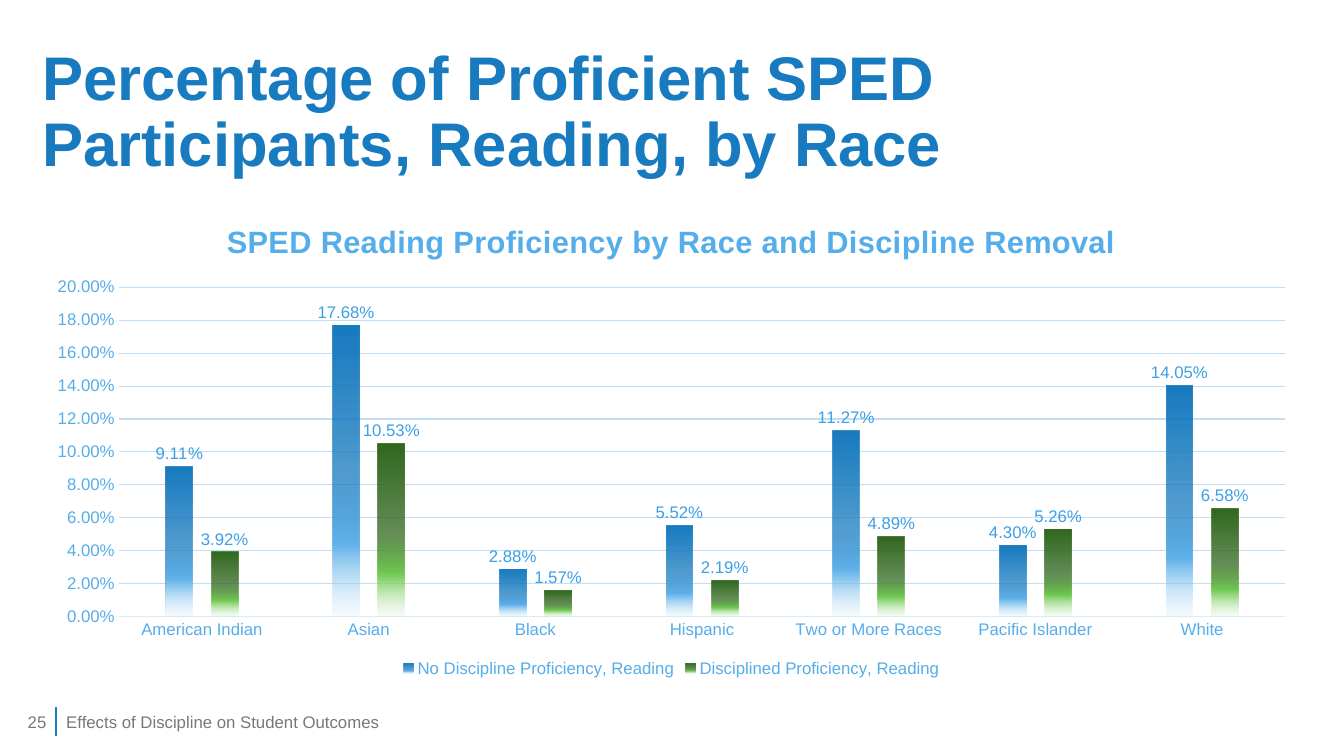
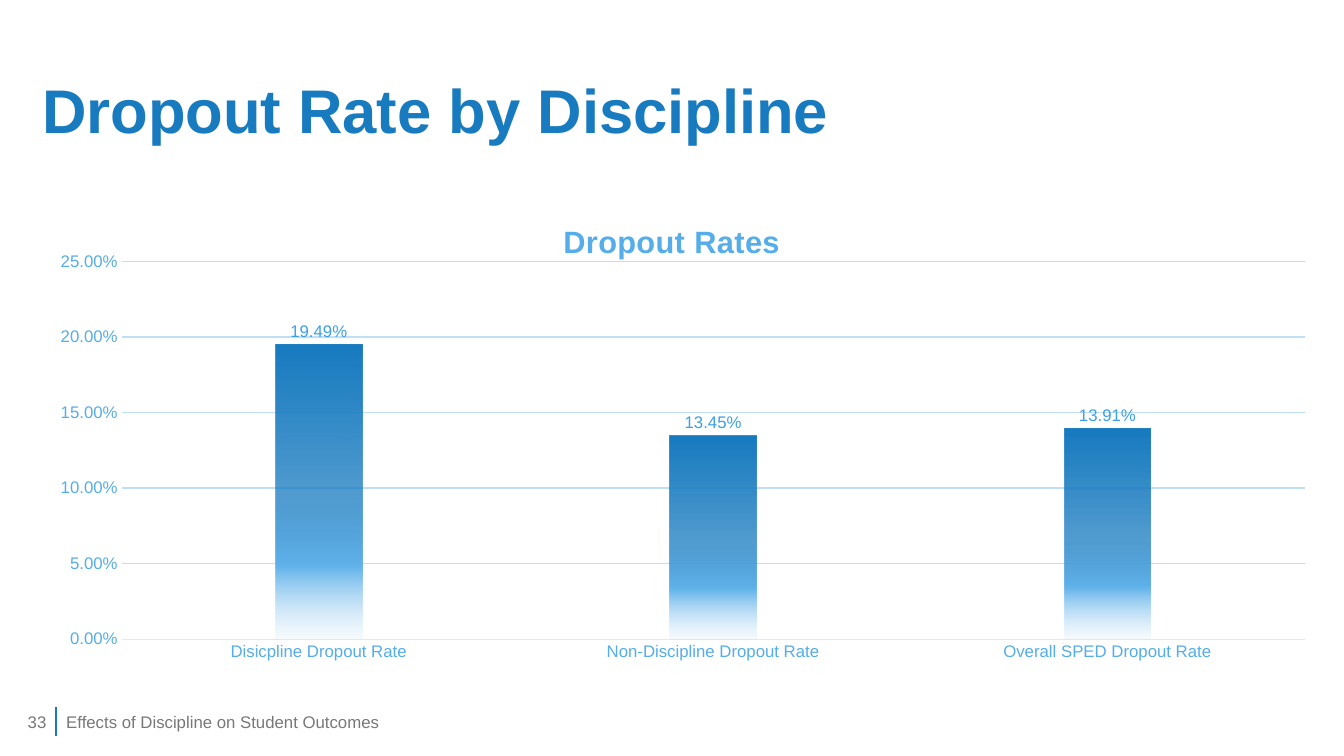
from lxml import etree
from pptx import Presentation
from pptx import util as u
from pptx.chart.data import CategoryChartData
from pptx.dml.color import RGBColor
from pptx.enum import chart as charts, shapes, text
from pptx.oxml import parse_xml
from pptx.oxml.ns import nsdecls, qn

FONT = "Arial"
BLUE = RGBColor(0x18, 0x7B, 0xC0)
LIGHT_BLUE = RGBColor(0x55, 0xAD, 0xEA)
LABEL_BLUE = RGBColor(0x3B, 0xA0, 0xE6)
AXIS_LINE = RGBColor(0xD8, 0xEC, 0xFA)
GRID_LINE = RGBColor(0xC0, 0xDF, 0xF5)
GRAY = RGBColor(0x78, 0x78, 0x78)

SKY = RGBColor(0x62, 0xB3, 0xEB)
PALE_BLUE = RGBColor(0xCB, 0xE6, 0xF8)
GREEN = RGBColor(0x32, 0x68, 0x20)
LEAF = RGBColor(0x71, 0xCA, 0x53)
PALE_GREEN = RGBColor(0xD0, 0xED, 0xC6)
BAR_COLORS = [(BLUE, SKY, PALE_BLUE), (GREEN, LEAF, PALE_GREEN)]

MARGIN, CONTENT_WIDTH = u.Cm(0.81), u.Cm(32.23)
FOOTER_TOP, FOOTER_HEIGHT = u.Cm(17.68), u.Cm(1.02)
DIVIDER_LEFT = u.Cm(1.42)
FOOTER = "Effects of Discipline on Student Outcomes"
PERCENT = "0.00%"


def style_font(font, size, color, bold=False):
    font.name = FONT
    font.size = u.Pt(size)
    font.bold = bold
    font.color.rgb = color


def add_text(page, place, words, size, color, bold=False,
             align=text.PP_ALIGN.LEFT, spacing=1.0):
    frame = page.shapes.add_textbox(*place).text_frame
    frame.word_wrap = True
    frame.vertical_anchor = text.MSO_ANCHOR.MIDDLE
    para = frame.paragraphs[0]
    para.alignment = align
    para.line_spacing = spacing
    span = para.add_run()
    span.text = words
    style_font(span.font, size, color, bold)


def add_page(deck, title, number):
    """Add a slide with the shared title and footer."""
    page = deck.slides.add_slide(deck.slide_layouts[6])
    divider = page.shapes.add_connector(
        shapes.MSO_CONNECTOR.STRAIGHT,
        DIVIDER_LEFT, u.Cm(17.81), DIVIDER_LEFT, u.Cm(18.54))
    divider.line.color.rgb = BLUE
    divider.line.width = u.Pt(1.5)
    etree.SubElement(divider._element.spPr, qn("a:effectLst"))

    add_text(page, (MARGIN, u.Cm(1.02), CONTENT_WIDTH, u.Cm(3.68)),
             title, 44, BLUE, bold=True, spacing=0.9)
    add_text(page, (DIVIDER_LEFT, FOOTER_TOP, u.Cm(16.56), FOOTER_HEIGHT),
             FOOTER, 12, GRAY)
    add_text(page, (0, FOOTER_TOP, DIVIDER_LEFT, FOOTER_HEIGHT),
             str(number), 12, GRAY, align=text.PP_ALIGN.RIGHT)
    return page


def fade_bars(series, colors):
    """Fill the bars from a strong top to a nearly clear bottom."""
    strong, bright, pale = colors
    stops = [(0, strong, 100), (51, strong, 75), (75, bright, 100), (100, pale, 15)]
    stop_xml = "".join(
        f'<a:gs pos="{place * 1000}"><a:srgbClr val="{color}">'
        f'<a:alpha val="{opacity * 1000}"/></a:srgbClr></a:gs>'
        for place, color, opacity in stops)
    gradient = parse_xml(
        f'<a:gradFill {nsdecls("a")} rotWithShape="1"><a:gsLst>{stop_xml}</a:gsLst>'
        '<a:lin ang="5400000" scaled="0"/></a:gradFill>')
    series.format.fill.solid()
    bar_props = series._element.get_or_add_spPr()
    bar_props.replace(bar_props.find(qn("a:solidFill")), gradient)


def label_bars(series):
    labels = series.data_labels
    labels.show_value = True
    labels.number_format = PERCENT
    labels.number_format_is_linked = False
    labels.position = charts.XL_LABEL_POSITION.OUTSIDE_END
    style_font(labels.font, 12, LABEL_BLUE)


def title_chart(chart, words):
    chart.has_title = True
    span = chart.chart_title.text_frame.paragraphs[0].add_run()
    span.text = words
    style_font(span.font, 22, LIGHT_BLUE, bold=True)
    span.font._element.set("spc", "40")


def style_axes(chart, top, step):
    for axis in (chart.category_axis, chart.value_axis):
        axis.major_tick_mark = axis.minor_tick_mark = charts.XL_TICK_MARK.NONE
        style_font(axis.tick_labels.font, 12, LIGHT_BLUE)
    category_line = chart.category_axis.format.line
    category_line.color.rgb = AXIS_LINE
    category_line.width = u.Pt(0.75)

    values = chart.value_axis
    values.minimum_scale, values.maximum_scale, values.major_unit = 0, top, step
    values.tick_labels.number_format = PERCENT
    values.tick_labels.number_format_is_linked = False
    values.format.line.fill.background()
    grid = values.major_gridlines.format.line
    grid.color.rgb = GRID_LINE
    grid.width = u.Pt(0.75)


def place_plot(chart, area):
    """Fix the inner plot area as fractions (x, y, w, h) of the chart."""
    plot_area = chart._chartSpace.chart.plotArea
    for old in plot_area.findall(qn("c:layout")):
        plot_area.remove(old)
    sizes = "".join(f'<c:{key} val="{value}"/>' for key, value in zip("xywh", area))
    plot_area.insert(0, parse_xml(
        f'<c:layout {nsdecls("c")}><c:manualLayout><c:layoutTarget val="inner"/>'
        f'<c:xMode val="edge"/><c:yMode val="edge"/>{sizes}</c:manualLayout></c:layout>'))


def add_bar_chart(page, title, categories, rows, top, step):
    data = CategoryChartData(number_format=PERCENT)
    data.categories = categories
    for name, values in rows:
        data.add_series(name, values)
    chart = page.shapes.add_chart(
        charts.XL_CHART_TYPE.COLUMN_CLUSTERED,
        MARGIN, u.Cm(5.08), CONTENT_WIDTH, u.Cm(12.09), data).chart
    style_font(chart.font, 10, BLUE)
    title_chart(chart, title)
    style_axes(chart, top, step)

    plot = chart.plots[0]
    plot.gap_width, plot.overlap = 355, -70
    plot.vary_by_categories = False
    for series, colors in zip(plot.series, BAR_COLORS):
        fade_bars(series, colors)
        label_bars(series)

    chart.has_legend = len(rows) > 1
    if chart.has_legend:
        chart.legend.position = charts.XL_LEGEND_POSITION.BOTTOM
        chart.legend.include_in_layout = False
        style_font(chart.legend.font, 12, LIGHT_BLUE)
    return chart


def main():
    deck = Presentation()
    deck.slide_width, deck.slide_height = u.Cm(33.87), u.Cm(19.05)

    page = add_page(
        deck, "Percentage of Proficient SPED Participants, Reading, by Race", 25)
    add_bar_chart(
        page, "SPED Reading Proficiency by Race and Discipline Removal",
        ["American Indian", "Asian", "Black", "Hispanic", "Two or More Races",
         "Pacific Islander", "White"],
        [("No Discipline Proficiency, Reading",
          [0.0911, 0.1768, 0.0288, 0.0552, 0.1127, 0.043, 0.1405]),
         ("Disciplined Proficiency, Reading",
          [0.0392, 0.1053, 0.0157, 0.0219, 0.0489, 0.0526, 0.0658])],
        top=0.2, step=0.02)

    page = add_page(deck, "Dropout Rate by Discipline", 33)
    chart = add_bar_chart(
        page, "Dropout Rates",
        ["Disicpline Dropout Rate", "Non-Discipline Dropout Rate",
         "Overall SPED Dropout Rate"],
        [("Series 1", [0.1949, 0.1345, 0.1391])],
        top=0.25, step=0.05)
    place_plot(chart, (0.07, 0.125, 0.925, 0.787))

    deck.save("out.pptx")


if __name__ == "__main__":
    main()
